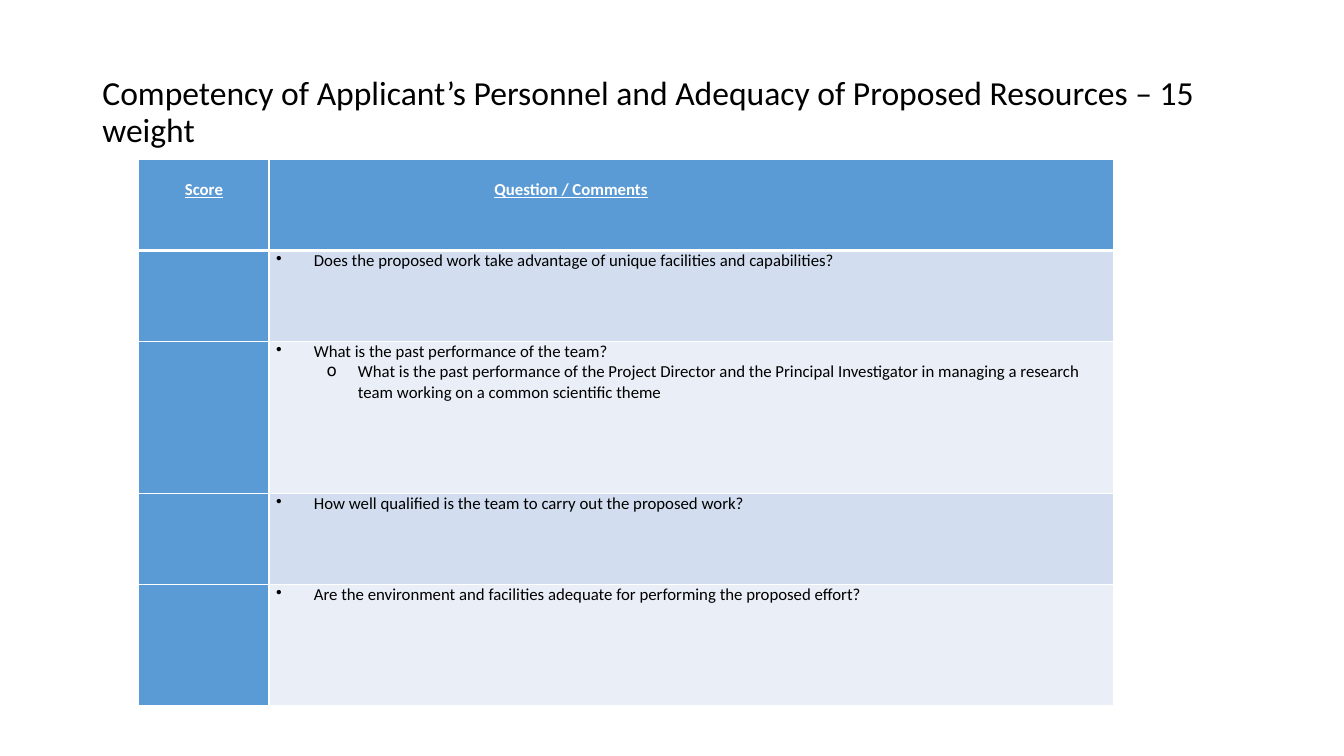
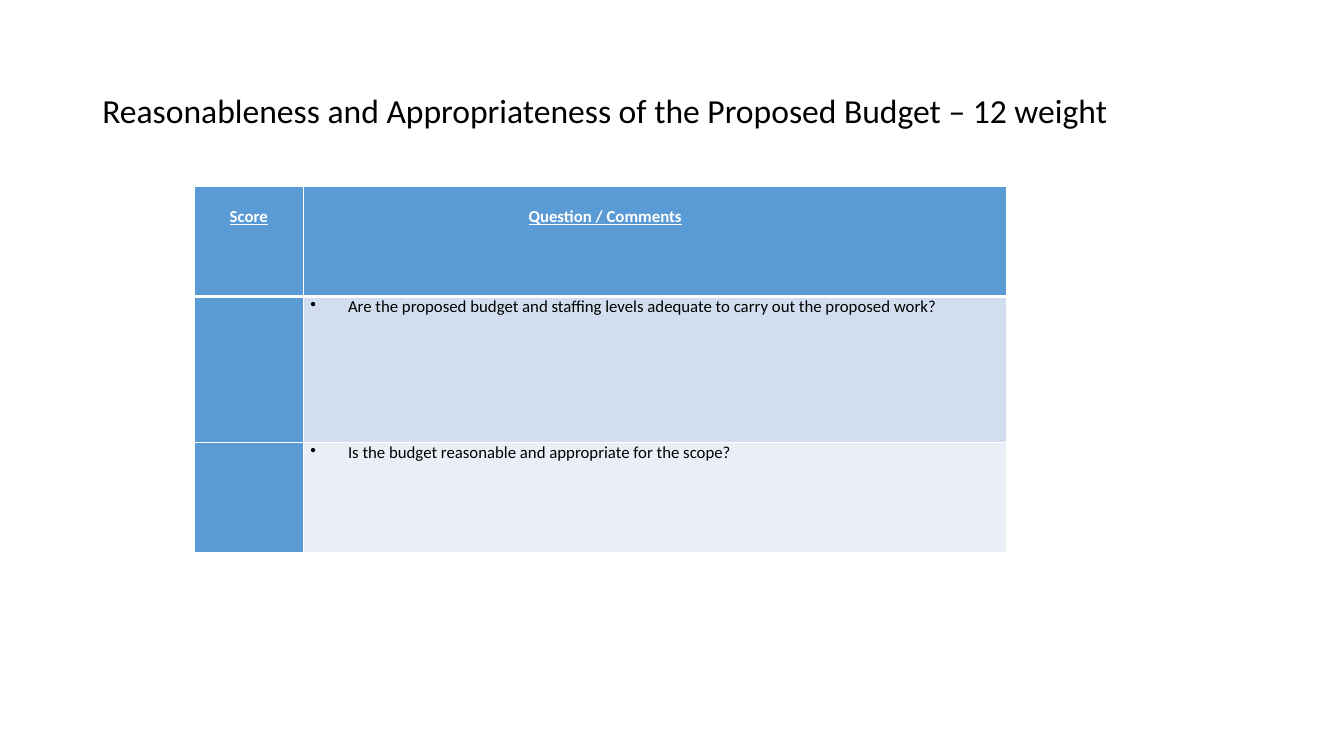
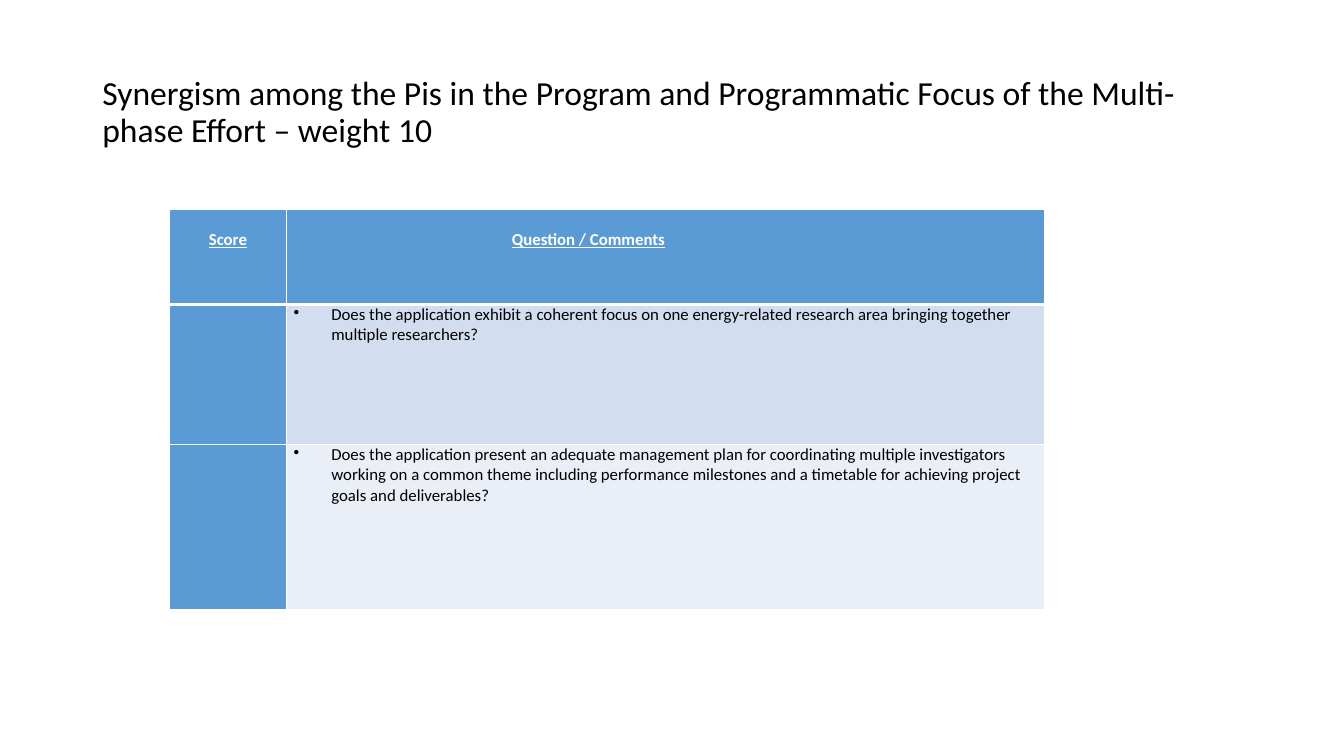
from dataclasses import dataclass

from lxml import etree
from pptx import Presentation
from pptx.dml.color import RGBColor
from pptx.enum.text import MSO_ANCHOR, PP_ALIGN
from pptx.oxml.ns import qn
from pptx.util import Cm, Pt

MIDDLE = MSO_ANCHOR.MIDDLE
CENTER, LEFT = PP_ALIGN.CENTER, PP_ALIGN.LEFT


@dataclass(frozen=True)
class Theme:
    font: str = "Calibri"
    title_size: float = 24
    body_size: float = 12
    black: str = "000000"
    white: str = "FFFFFF"
    blue: str = "5B9BD5"
    bands: tuple[str, str] = ("D2DEEF", "EAEFF7")
    rule: float = 1
    header_rule: float = 3


@dataclass(frozen=True)
class Bullet:
    char: str
    left: float
    hang: float


@dataclass(frozen=True)
class Question:
    text: str
    height: float
    detail: str = ""


@dataclass(frozen=True)
class Criterion:
    title: str
    left: float
    top: float
    cols: tuple[float, float]
    header_height: float
    questions: tuple[Question, ...]


THEME = Theme()
BULLETS = (Bullet("•", 0.95, 0.95), Bullet("o", 2.06, 0.79))
HEADING_INDENT = 5.5

CRITERIA = (
    Criterion(
        "Competency of Applicant’s Personnel and Adequacy of Proposed Resources – 15 weight",
        3.5, 4.02, (3.28, 21.28), 2.29,
        (
            Question("Does the proposed work take advantage of unique facilities and "
                     "capabilities?", 2.29),
            Question("What is the past performance of the team?", 3.83,
                     "What is the past performance of the Project Director and the "
                     "Principal Investigator in managing a research team working on a "
                     "common scientific theme"),
            Question("How well qualified is the team to carry out the proposed work?", 2.29),
            Question("Are the environment and facilities adequate for performing the "
                     "proposed effort?", 3.05),
        ),
    ),
    Criterion(
        "Reasonableness and Appropriateness of the Proposed Budget – 12 weight",
        4.9, 4.7, (2.74, 17.73), 2.77,
        (
            Question("Are the proposed budget and staffing levels adequate to carry out "
                     "the proposed work?", 3.68),
            Question("Is the budget reasonable and appropriate for the scope?", 2.77),
        ),
    ),
    Criterion(
        "Synergism among the Pis in the Program and Programmatic Focus of the "
        "Multi-phase Effort – weight 10",
        4.27, 5.28, (2.95, 19.1), 2.39,
        (
            Question("Does the application exhibit a coherent focus on one energy-related "
                     "research area bringing together multiple researchers?", 3.53),
            Question("Does the application present an adequate management plan for "
                     "coordinating multiple investigators working on a common theme "
                     "including performance milestones and a timetable for achieving "
                     "project goals and deliverables?", 4.17),
        ),
    ),
)


def add_run(p, text: str, color: str, size: float, **formats) -> None:
    r = p.add_run()
    r.text = text
    r.font.color.rgb = RGBColor.from_string(color)
    values = {"name": THEME.font, "size": Pt(size), "bold": False, **formats}
    for name, value in values.items():
        setattr(r.font, name, value)


def set_indent(p, left: float, hang: float = 0, char: str = "") -> None:
    pPr = p._p.get_or_add_pPr()
    pPr.set("marL", str(Cm(left)))
    pPr.set("indent", str(-Cm(hang)))
    if char:
        etree.SubElement(pPr, qn("a:buChar"), char=char)


def style_cell(cell, fill: str, top: float, bottom: float) -> None:
    margins = {"margin_left": Cm(0.18), "margin_right": Cm(0.18),
               "margin_top": 0, "margin_bottom": 0}
    for name, value in margins.items():
        setattr(cell, name, value)
    # Cell borders
    tcPr = cell._tc.get_or_add_tcPr()
    widths = {"L": THEME.rule, "R": THEME.rule, "T": top, "B": bottom}
    for side, width in widths.items():
        ln = etree.SubElement(tcPr, qn(f"a:ln{side}"), w=str(Pt(width)))
        solid = etree.SubElement(ln, qn("a:solidFill"))
        etree.SubElement(solid, qn("a:srgbClr"), val=THEME.white)
    cell.fill.solid()
    cell.fill.fore_color.rgb = RGBColor.from_string(fill)


def add_title(s, text: str) -> None:
    tf = s.shapes.add_textbox(Cm(2.33), Cm(1.01), Cm(29.21), Cm(3.68)).text_frame
    tf.word_wrap = True
    tf.vertical_anchor = MIDDLE
    p = tf.paragraphs[0]
    p.line_spacing = 0.9
    add_run(p, text, THEME.black, THEME.title_size)


def add_heading(cell, text: str, align: PP_ALIGN, indent: float) -> None:
    cell.margin_top = Cm(0.51)
    p = cell.text_frame.paragraphs[0]
    p.alignment = align
    set_indent(p, indent)
    add_run(p, text, THEME.white, THEME.body_size, bold=True, underline=True)


def add_question(cell, question: Question) -> None:
    tf = cell.text_frame
    texts = [text for text in (question.text, question.detail) if text]
    for level, text in enumerate(texts):
        p = tf.add_paragraph() if level else tf.paragraphs[0]
        p.level = level
        bullet = BULLETS[level]
        set_indent(p, bullet.left, bullet.hang, bullet.char)
        add_run(p, text, THEME.black, THEME.body_size)


def add_score_table(s, c: Criterion) -> None:
    heights = [c.header_height, *(q.height for q in c.questions)]
    table = s.shapes.add_table(len(heights), len(c.cols), Cm(c.left), Cm(c.top),
                               Cm(sum(c.cols)), Cm(sum(heights))).table
    table.first_row = table.horz_banding = False
    for column, width in zip(table.columns, c.cols):
        column.width = Cm(width)

    # Fills and borders
    for i, height in enumerate(heights):
        table.rows[i].height = Cm(height)
        top = THEME.header_rule if i == 1 else THEME.rule
        bottom = THEME.header_rule if i == 0 else THEME.rule
        comment_fill = THEME.bands[(i - 1) % 2] if i else THEME.blue
        for j, fill in enumerate((THEME.blue, comment_fill)):
            style_cell(table.cell(i, j), fill, top, bottom)

    # Text
    add_heading(table.cell(0, 0), "Score", CENTER, 0)
    add_heading(table.cell(0, 1), "Question / Comments", LEFT, HEADING_INDENT)
    for i, question in enumerate(c.questions, 1):
        add_question(table.cell(i, 1), question)


def main() -> None:
    prs = Presentation()
    prs.slide_width, prs.slide_height = Cm(33.87), Cm(19.05)
    blank = prs.slide_layouts[6]
    for criterion in CRITERIA:
        s = prs.slides.add_slide(blank)
        add_title(s, criterion.title)
        add_score_table(s, criterion)
    prs.save("out.pptx")


if __name__ == "__main__":
    main()
